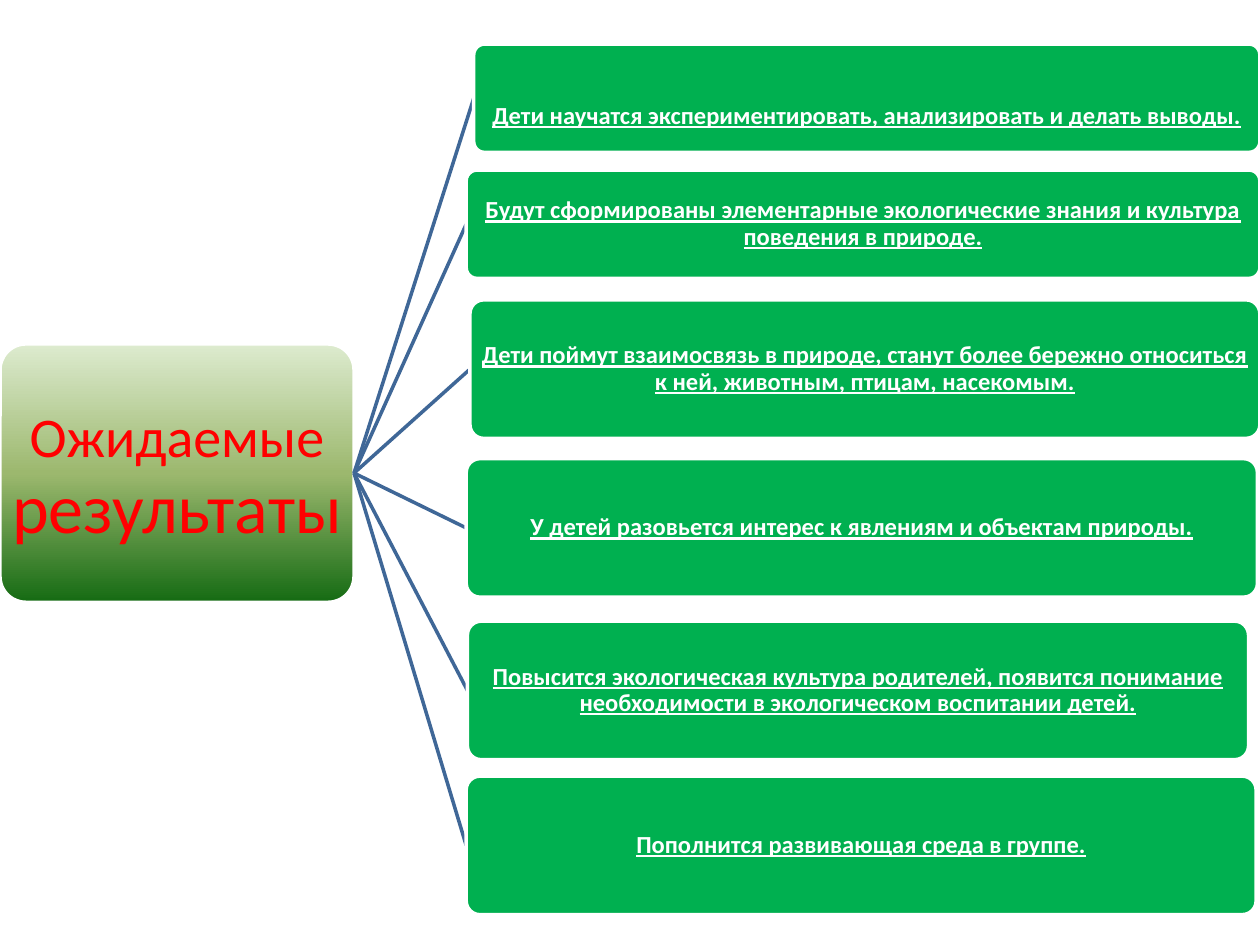
from copy import deepcopy
from dataclasses import dataclass

from lxml.etree import SubElement
from pptx import Presentation
from pptx.dml.color import RGBColor
from pptx.enum.shapes import MSO_CONNECTOR, MSO_SHAPE
from pptx.enum.text import MSO_ANCHOR, PP_ALIGN
from pptx.oxml.ns import qn
from pptx.util import Emu, Pt


@dataclass(frozen=True)
class Theme:
    font: str = "Calibri"
    white: str = "FFFFFF"
    heading: str = "FF0000"
    result: str = "00B050"
    link: str = "3F6797"
    gradient: tuple = ("DDEBCF", "9CB86E", "156B13")
    heading_sizes: tuple = (32, 40)
    result_size: int = 14
    line_width: int = 2


THEME = Theme()
EMU_PER_PX = 9144  # 100 px to the inch

HEADING_BOX = (0, 273, 281, 205)
HEADING_WORDS = ("Ожидаемые", " результаты")

# Box (left, top, width, height), extra space above the text, wording
RESULTS = [
    ((376, 35, 624, 86), 29,
     "Дети научатся экспериментировать, анализировать и делать выводы."),
    ((370, 135, 630, 86), 0,
     "Будут сформированы элементарные экологические знания и культура поведения в природе."),
    ((373, 238, 627, 110), 0,
     "Дети поймут взаимосвязь в природе, станут более бережно относиться к ней, "
     "животным, птицам, насекомым."),
    ((370, 364, 628, 110), 0,
     "У детей разовьется интерес к явлениям и объектам природы."),
    ((371, 493, 620, 110), 0,
     "Повысится экологическая культура родителей, появится понимание необходимости "
     "в экологическом воспитании детей."),
    ((370, 616, 627, 110), 0,
     "Пополнится развивающая среда в группе."),
]


def px(length):
    return Emu(length * EMU_PER_PX)


def rgb(value):
    return RGBColor.from_string(value)


def set_line(line, color):
    line.color.rgb = rgb(color)
    line.width = Pt(THEME.line_width)


def add_rounded_box(slide, box, inset, space_above=0):
    node = slide.shapes.add_shape(MSO_SHAPE.ROUNDED_RECTANGLE, *map(px, box))
    node.adjustments[0] = 0.1
    node.shadow.inherit = False
    set_line(node.line, THEME.white)
    frame_format = {
        "word_wrap": True,
        "vertical_anchor": MSO_ANCHOR.MIDDLE,
        "margin_left": px(inset),
        "margin_right": px(inset),
        "margin_top": px(inset + space_above),
        "margin_bottom": px(inset),
    }
    for name, value in frame_format.items():
        setattr(node.text_frame, name, value)
    paragraph = node.text_frame.paragraphs[0]
    paragraph.alignment = PP_ALIGN.CENTER
    paragraph.line_spacing = 0.9
    return node


def add_text(node, text, color, **font_format):
    run = node.text_frame.paragraphs[0].add_run()
    run.text = text
    run.font.color.rgb = rgb(color)
    for name, value in {"name": THEME.font, **font_format}.items():
        setattr(run.font, name, value)


def fill_gradient(node, colors):
    """Spread three colours evenly from top to bottom."""
    node.fill.gradient()
    node.fill.gradient_angle = 270
    first = node.element.spPr.find(".//" + qn("a:gs"))
    first.addnext(deepcopy(first))
    for index, (stop, color) in enumerate(zip(node.fill.gradient_stops, colors)):
        stop.color.rgb = rgb(color)
        stop.position = index / (len(colors) - 1)


def add_heading(slide, box):
    heading = add_rounded_box(slide, box, inset=2)
    fill_gradient(heading, THEME.gradient)
    for word, size in zip(HEADING_WORDS, THEME.heading_sizes):
        add_text(heading, word, THEME.heading, size=Pt(size))
    return heading


def add_result(slide, box, space_above, wording):
    result = add_rounded_box(slide, box, inset=1, space_above=space_above)
    result.fill.solid()
    result.fill.fore_color.rgb = rgb(THEME.result)
    add_text(result, wording, THEME.white,
             size=Pt(THEME.result_size), bold=True, underline=True)
    return result


def link(slide, heading, result):
    """Join the heading to a result, with the line behind the result box."""
    branch = slide.shapes.add_connector(MSO_CONNECTOR.STRAIGHT, 0, 0, 0, 0)
    branch.begin_connect(heading, 3)
    branch.end_connect(result, 1)
    set_line(branch.line, THEME.link)
    SubElement(branch.element.spPr, qn("a:effectLst"))
    result.element.addprevious(branch.element)


def main():
    presentation = Presentation()
    presentation.slide_width, presentation.slide_height = px(1000), px(750)
    slide = presentation.slides.add_slide(presentation.slide_layouts[6])
    heading = add_heading(slide, HEADING_BOX)
    for box, space_above, wording in RESULTS:
        link(slide, heading, add_result(slide, box, space_above, wording))
    presentation.save("out.pptx")


if __name__ == "__main__":
    main()
